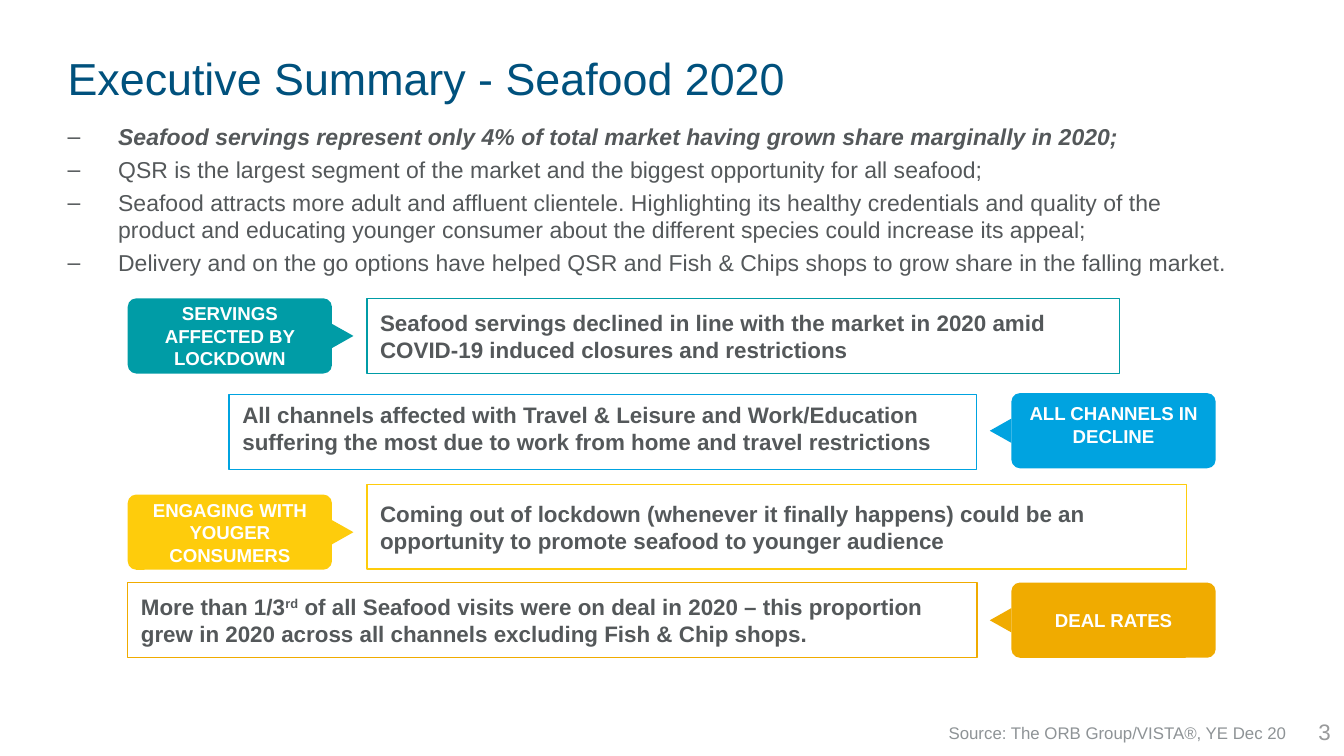
from lxml import etree
from pptx import Presentation
from pptx.dml.color import RGBColor
from pptx.enum.shapes import MSO_SHAPE
from pptx.enum.text import MSO_ANCHOR, PP_ALIGN
from pptx.oxml.ns import qn
from pptx.util import Emu, Pt

RECT, ROUND, TRIANGLE = MSO_SHAPE.RECTANGLE, MSO_SHAPE.ROUNDED_RECTANGLE, MSO_SHAPE.ISOSCELES_TRIANGLE
TOP, MIDDLE = MSO_ANCHOR.TOP, MSO_ANCHOR.MIDDLE
LEFT, CENTER, RIGHT = PP_ALIGN.LEFT, PP_ALIGN.CENTER, PP_ALIGN.RIGHT
PX = 4572
GREY = "54585A"
LABEL_W, ROW_H = 304, 112
TIP_W, TIP_H = 36, 32

BULLETS = [
    "Seafood servings represent only 4% of total market having grown share marginally in 2020;",
    "QSR is the largest segment of the market and the biggest opportunity for all seafood;",
    "Seafood attracts more adult and affluent clientele. Highlighting its healthy credentials and quality "
    "of the product and educating younger consumer about the different species could increase its appeal;",
    "Delivery and on the go options have helped QSR and Fish & Chips shops to grow share in the falling market.",
]
ROWS = [
    ("009CA6", "SERVINGS AFFECTED BY LOCKDOWN", 190, 444, (546, 444, 1120, ROW_H), MIDDLE,
     ["Seafood servings declined in line with the market in 2020 amid COVID-19 induced closures "
      "and restrictions"]),
    ("00A3E0", "ALL CHANNELS IN DECLINE", 1505, 585, (341, 587, 1112, ROW_H), TOP,
     ["All channels affected with Travel & Leisure and Work/Education suffering the most due to work "
      "from home and travel restrictions"]),
    ("FECC0C", "ENGAGING WITH YOUGER CONSUMERS", 190, 736, (546, 721, 1220, 126), MIDDLE,
     ["Coming out of lockdown (whenever it finally happens) could be an opportunity to promote seafood "
      "to younger audience"]),
    ("F0AB00", "DEAL RATES", 1505, 867, (190, 867, 1264, ROW_H), MIDDLE,
     ["More than 1/3", "rd", " of all Seafood visits were on deal in 2020 – this proportion grew in 2020 "
      "across all channels excluding Fish & Chip shops."]),
]


def px(n):
    return Emu(n * PX)


def rgb(code):
    return RGBColor.from_string(code)


class Deck:
    font = "Arial"

    def __init__(self, width, height):
        self.prs = Presentation()
        self.prs.slide_width, self.prs.slide_height = px(width), px(height)
        self.s = self.prs.slides.add_slide(self.prs.slide_layouts[6])

    def run(self, p, text, color, **style):
        r = p.add_run()
        r.text = text
        r.font.color.rgb = rgb(color)
        for name, value in {"name": self.font, **style}.items():
            setattr(r.font, name, value)
        return r

    def frame(self, sp, anchor, align=LEFT):
        tf = sp.text_frame
        tf.word_wrap = True
        tf.vertical_anchor = anchor
        tf.paragraphs[0].alignment = align
        return tf

    def text(self, box, text, size, color, anchor=MIDDLE, align=LEFT):
        sp = self.s.shapes.add_textbox(*map(px, box))
        tf = self.frame(sp, anchor, align)
        self.run(tf.paragraphs[0], text, color, size=Pt(size))

    def bullets(self, box, items, size):
        tf = self.frame(self.s.shapes.add_textbox(*map(px, box)), MIDDLE)
        for i, item in enumerate(items):
            p = tf.add_paragraph() if i else tf.paragraphs[0]
            p.space_before = Pt(2.8)
            pPr = p._p.get_or_add_pPr()
            pPr.set("marL", str(px(75)))
            pPr.set("indent", str(-px(75)))
            etree.SubElement(pPr, qn("a:buFont")).set("typeface", self.font)
            etree.SubElement(pPr, qn("a:buChar")).set("char", "–")
            self.run(p, item, GREY, size=Pt(size), bold=i == 0, italic=i == 0)

    def shape(self, kind, box, fill=None, line=None):
        sp = self.s.shapes.add_shape(kind, *map(px, box))
        sp.shadow.inherit = False
        if fill:
            sp.fill.solid()
            sp.fill.fore_color.rgb = rgb(fill)
        else:
            sp.fill.background()
        if line:
            sp.line.color.rgb = rgb(line)
            sp.line.width = Pt(0.75)
        else:
            sp.line.fill.background()
        return sp

    def label(self, x, y, text, color, anchor, points_right):
        sp = self.shape(ROUND, (x, y, LABEL_W, ROW_H), fill=color)
        sp.adjustments[0] = 0.114
        tf = self.frame(sp, anchor, CENTER)
        self.run(tf.paragraphs[0], text, "FFFFFF", size=Pt(10), bold=True)
        tip_x = x + LABEL_W - 2 if points_right else x + 2 - TIP_W
        tip_y = y + (ROW_H - TIP_H) // 2
        tip = self.shape(TRIANGLE, (tip_x, tip_y, TIP_W, TIP_H), fill=color)
        tip.rotation = 90 if points_right else 270

    def message(self, box, parts, color, anchor):
        tf = self.frame(self.shape(RECT, box, line=color), anchor)
        for i, part in enumerate(parts):
            r = self.run(tf.paragraphs[0], part, GREY, size=Pt(12), bold=True)
            if i == 1:
                r._r.get_or_add_rPr().set("baseline", "30000")


def main():
    deck = Deck(2000, 1125)
    deck.text((81, 45, 1834, 142), "Executive Summary - Seafood 2020", 24, "00517D")
    deck.text((1880, 1058, 120, 62), "3", 12, "999A9B", align=RIGHT)
    deck.bullets((81, 183, 1770, 228), BULLETS, 12.3)
    deck.text((1392, 1066, 590, 60), "Source: The ORB Group/VISTA®, YE Dec 20", 9, "8E9396", anchor=TOP)
    for color, title, x, y, box, anchor, parts in ROWS:
        deck.label(x, y, title, color, anchor, points_right=x < box[0])
        deck.message(box, parts, color, anchor)
    deck.prs.save("out.pptx")


if __name__ == "__main__":
    main()
